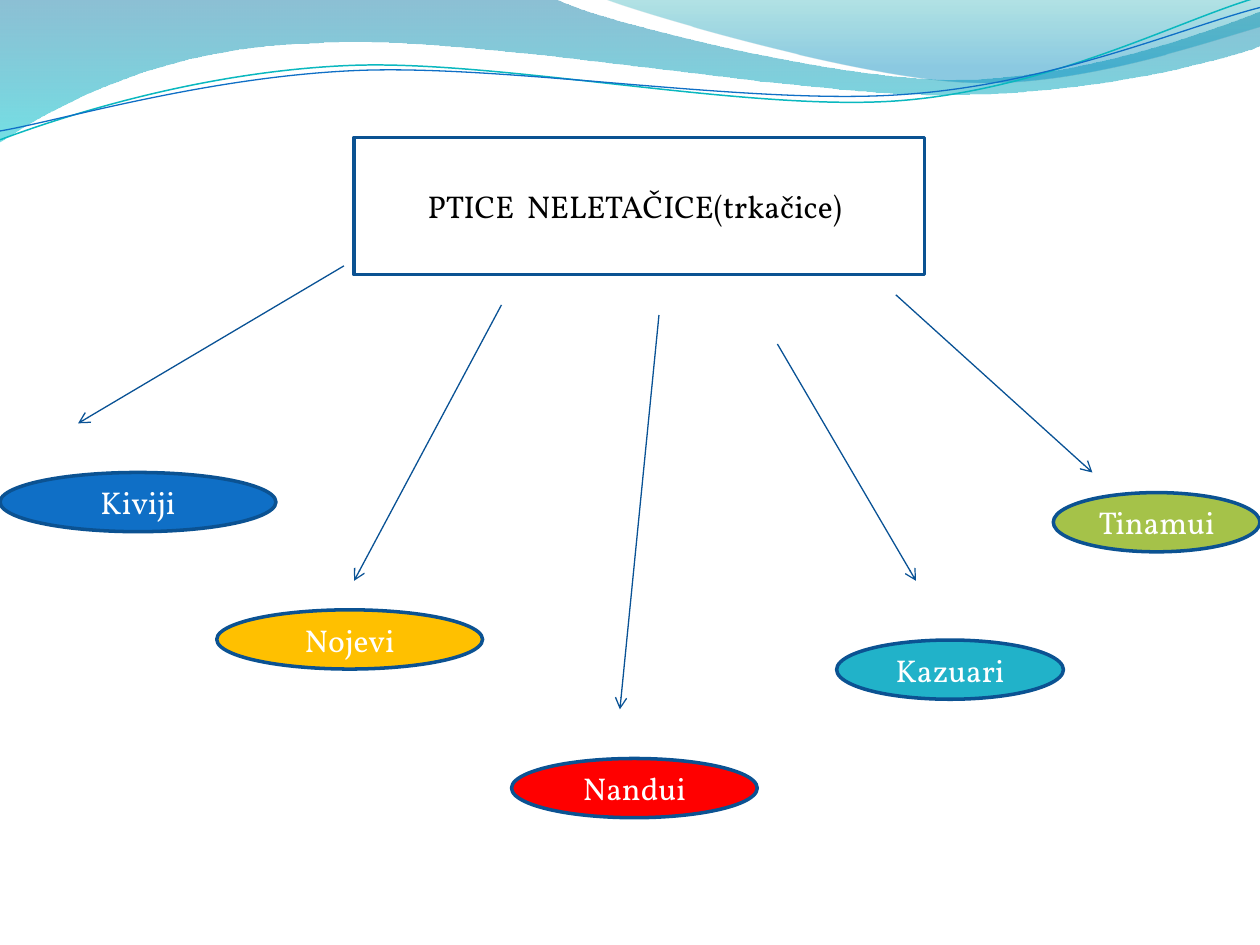
import math

from lxml import etree
from pptx import Presentation
from pptx.dml.color import RGBColor
from pptx.enum import shapes, text
from pptx.oxml.ns import qn
from pptx import util as u

COLORS = {
    "white": "FFFFFF", "black": "000000", "outline": "0B5292", "arrow": "095295",
    "blue": "0F6FC6", "amber": "FFC000", "red": "FF0000", "cyan": "21B2C9",
    "green": "A5C249", "teal": "0AB8BF", "wave_blue": "0074A1", "wave_aqua": "00C6CF",
    "crest_teal": "00A1A9", "crest_blue": "008BBF",
}


def rgb(name):
    return RGBColor.from_string(COLORS[name])


def write_text(sp, content, font="Vollkorn", size=18, color="white", right=0.1):
    tf = sp.text_frame
    tf.word_wrap = True
    tf.margin_right = u.Inches(right)
    tf.vertical_anchor = text.MSO_ANCHOR.MIDDLE
    p = tf.paragraphs[0]
    p.alignment = text.PP_ALIGN.CENTER
    r = p.add_run()
    r.text = content
    r.font.name = font
    r.font.size = u.Pt(size)
    r.font.color.rgb = rgb(color)


def turn(point, center, degrees):
    """Rotate a point clockwise around a center."""
    dx, dy = point[0] - center[0], point[1] - center[1]
    cos, sin = math.cos(math.radians(degrees)), math.sin(math.radians(degrees))
    return center[0] + dx * cos - dy * sin, center[1] + dx * sin + dy * cos


class SlideBuilder:
    """Holds the line style and the current slide."""

    def __init__(self, s, outline="outline", outline_width=2, arrow_width=0.75):
        self.s = s
        self.outline = outline
        self.outline_width = outline_width
        self.arrow_width = arrow_width

    def box(self, kind, at, content, fill, **text_format):
        sp = self.s.shapes.add_shape(kind, *map(u.Inches, at))
        sp.shadow.inherit = False
        sp.fill.solid()
        sp.fill.fore_color.rgb = rgb(fill)
        sp.line.color.rgb = rgb(self.outline)
        sp.line.width = u.Pt(self.outline_width)
        write_text(sp, content, **text_format)

    def arrow(self, start, end):
        ends = map(u.Inches, (*start, *end))
        cx = self.s.shapes.add_connector(shapes.MSO_CONNECTOR.STRAIGHT, *ends)
        cx.line.color.rgb = rgb("arrow")
        cx.line.width = u.Pt(self.arrow_width)
        etree.SubElement(cx.line._get_or_add_ln(), qn("a:tailEnd"), type="arrow")
        etree.SubElement(cx._element.spPr, qn("a:effectLst"))

    def curve(self, start, segments, close):
        """Build an outline; a segment has 1 point (line) or 3 (cubic Bézier)."""
        start, *ends = [tuple(map(u.Inches, pt))
                        for pt in (start, *(seg[-1] for seg in segments))]
        builder = self.s.shapes.build_freeform(*start)
        builder.add_line_segments(ends, close=close)
        sp = builder.convert_to_shape()
        sp.shadow.inherit = False
        lines = list(sp._element.spPr.iter(qn("a:lnTo")))
        for line, seg in zip(lines, segments):
            if len(seg) == 3:
                bezier = etree.Element(qn("a:cubicBezTo"))
                for x, y in seg:
                    etree.SubElement(bezier, qn("a:pt"), x=str(u.Inches(x) - sp.left),
                                     y=str(u.Inches(y) - sp.top))
                line.getparent().replace(line, bezier)
        return sp

    def wave(self, start, segments, stops):
        """Draw a closed wave; each stop is (position, colour, opacity in %)."""
        sp = self.curve(start, segments, close=True)
        sp.line.fill.background()
        sp.fill.gradient()
        sp.fill.gradient_angle = 270
        for stop, (position, color, _) in zip(sp.fill.gradient_stops, stops):
            stop.position = position
            stop.color.rgb = rgb(color)
        for clr, (_, _, opacity) in zip(sp._element.spPr.iter(qn("a:srgbClr")), stops):
            etree.SubElement(clr, qn("a:alpha"), val=str(opacity * 1000))

    def ripple(self, start, segments, color, width, center, tilt=2.7):
        """Draw an open curve as a level shape that is tilted counter-clockwise."""
        level = [[turn(pt, center, tilt) for pt in seg] for seg in segments]
        sp = self.curve(turn(start, center, tilt), level, close=False)
        sp.rotation = 360 - tilt
        sp.fill.background()
        sp.line.color.rgb = rgb(color)
        sp.line.width = u.Pt(width)


def main():
    prs = Presentation()
    prs.slide_width, prs.slide_height = u.Inches(10), u.Inches(7.5)
    b = SlideBuilder(prs.slides.add_slide(prs.slide_layouts[6]))

    b.wave((0, 0), [
        [(4.4, -0.01)],
        [(4.76, 0.17), (6.64, 0.63), (7.58, 0.63)],
        [(8.53, 0.63), (9.58, 0.26), (10, 0.09)],
        [(10.01, 0.36)],
        [(9.83, 0.44), (8.7, 0.76), (7.46, 0.75)],
        [(6.22, 0.75), (3.82, 0.28), (2.57, 0.34)],
        [(1.29, 0.36), (0.46, 0.83), (-0.01, 1.13)],
    ], [(0, "wave_blue", 45), (1, "wave_aqua", 55)])
    b.wave((4.79, -0.01), [
        [(5.09, 0.11), (6.82, 0.62), (7.69, 0.65)],
        [(8.56, 0.69), (9.61, 0.32), (10, 0.21)],
        [(10, 0)],
    ], [(0, "crest_teal", 30), (0.8, "crest_blue", 45)])
    b.ripple((0, 1.11), [
        [(0.48, 0.93), (1.58, 0.57), (2.77, 0.52)],
        [(3.95, 0.47), (5.93, 0.89), (7.13, 0.8)],
        [(8.33, 0.71), (9.38, 0.15), (9.98, -0.02)],
    ], "teal", 0.85, center=(4.99, 0.57))
    b.ripple((0, 1.04), [
        [(0.47, 0.96), (1.64, 0.61), (2.83, 0.56)],
        [(4.03, 0.51), (5.97, 0.84), (7.17, 0.75)],
        [(8.36, 0.67), (9.41, 0.21), (10, 0.06)],
    ], "blue", 0.75, center=(5, 0.59))

    birds = [
        ("Kiviji", "blue", 0, 3.75, 2.19, (2.73, 2.11), (0.62, 3.36)),
        ("Nojevi", "amber", 1.72, 4.84, 2.11, (3.98, 2.42), (2.81, 4.61)),
        ("Nandui", "red", 4.06, 6.02, 1.95, (5.23, 2.5), (4.92, 5.63)),
        ("Kazuari", "cyan", 6.64, 5.08, 1.8, (6.17, 2.73), (7.27, 4.61)),
        ("Tinamui", "green", 8.36, 3.91, 1.64, (7.11, 2.34), (8.67, 3.75)),
    ]
    for name, fill, left, top, width, _, _ in birds:
        b.box(shapes.MSO_SHAPE.OVAL, (left, top, width, 0.47), name, fill)
    for *_, start, end in birds:
        b.arrow(start, end)
    b.box(shapes.MSO_SHAPE.RECTANGLE, (2.81, 1.09, 4.53, 1.09),
          "PTICE  NELETAČICE(trkačice)", "white", color="black", right=0.17)

    prs.save("out.pptx")


if __name__ == "__main__":
    main()
